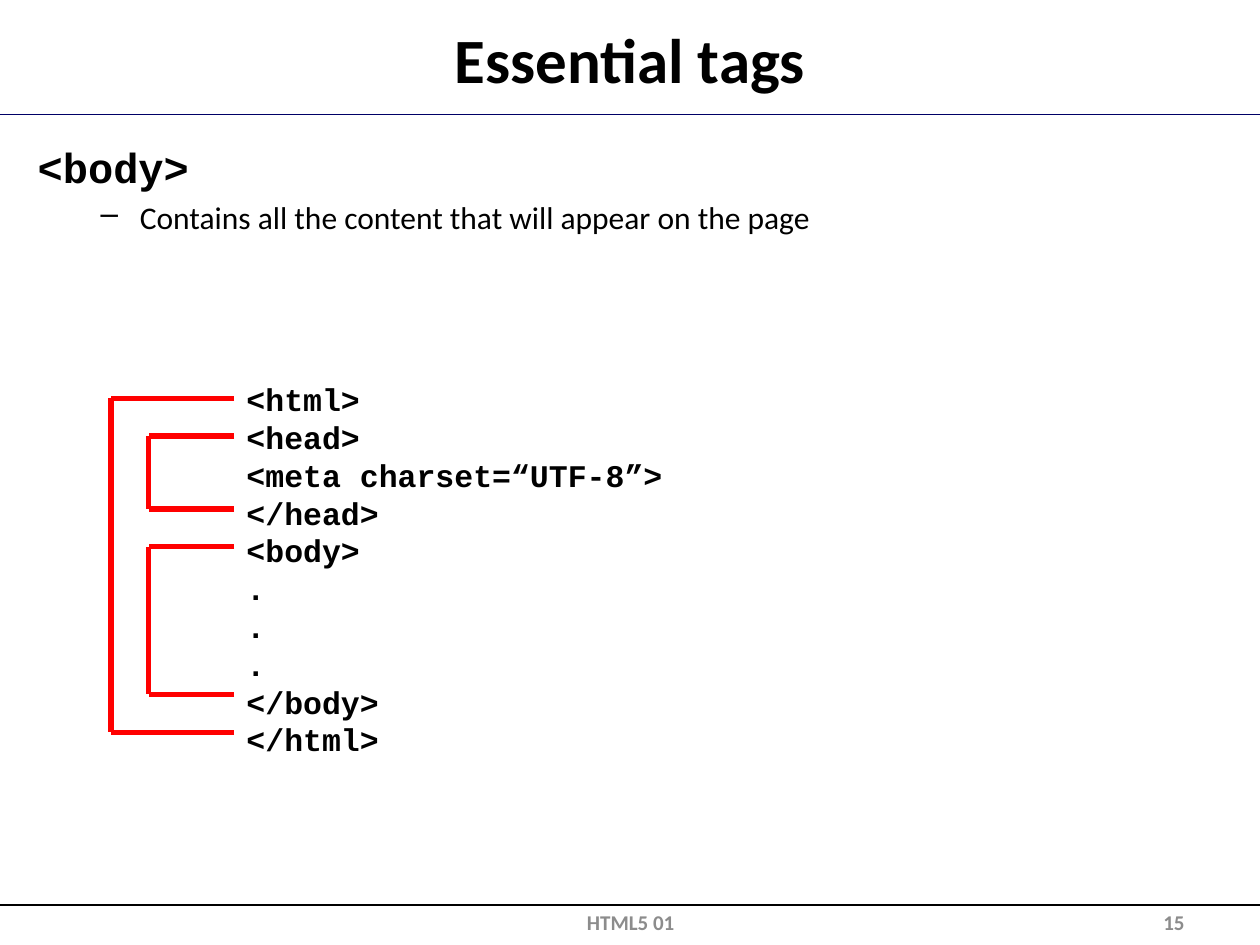
import lxml.etree
import pptx
import pptx.dml.color
import pptx.enum.shapes
import pptx.enum.text
import pptx.oxml.ns
import pptx.util

Cm = pptx.util.Cm
Pt = pptx.util.Pt
RGBColor = pptx.dml.color.RGBColor
ALIGN = pptx.enum.text.PP_ALIGN
ANCHOR = pptx.enum.text.MSO_ANCHOR
qn = pptx.oxml.ns.qn

BLACK = RGBColor(0x00, 0x00, 0x00)
NAVY = RGBColor(0x00, 0x00, 0x66)
RED = RGBColor(0xFF, 0x00, 0x00)
GRAY = RGBColor(0x8C, 0x8C, 0x8C)

presentation = pptx.Presentation()
presentation.slide_width = Cm(25.4)
presentation.slide_height = Cm(19.05)
slide = presentation.slides.add_slide(presentation.slide_layouts[6])


def add_line(left, top, right, bottom, color, width):
    connector = slide.shapes.add_connector(
        pptx.enum.shapes.MSO_CONNECTOR.STRAIGHT,
        Cm(left), Cm(top), Cm(right), Cm(bottom))
    connector.line.color.rgb = color
    connector.line.width = Pt(width)
    lxml.etree.SubElement(connector._element.spPr, qn("a:effectLst"))


def add_text(left, top, width, height, lines, align=ALIGN.LEFT, anchor=ANCHOR.TOP):
    shape = slide.shapes.add_textbox(Cm(left), Cm(top), Cm(width), Cm(height))
    frame = shape.text_frame
    frame.word_wrap = True
    frame.vertical_anchor = anchor
    for index, (text, font, size, bold, color) in enumerate(lines):
        paragraph = frame.add_paragraph() if index else frame.paragraphs[0]
        paragraph.alignment = align
        run = paragraph.add_run()
        run.text = text
        run.font.name = font
        run.font.size = Pt(size)
        run.font.bold = bold
        run.font.color.rgb = color
    return frame


add_line(0, 2.31, 25.4, 2.31, NAVY, 1)
add_line(0, 18.24, 25.4, 18.24, BLACK, 1)

add_text(0.25, 0.3, 24.9, 1.75, [("Essential tags", "Calibri", 36, True, BLACK)],
         ALIGN.CENTER, ANCHOR.MIDDLE)

body = add_text(0.51, 2.73, 24.38, 15.02, [
    ("<body>", "Courier New", 24, True, BLACK),
    ("Contains all the content that will appear on the page", "Calibri", 18, False, BLACK),
])
detail = body.paragraphs[1]
properties = detail._p.get_or_add_pPr()
properties.set("marL", str(Cm(2.06)))
properties.set("indent", str(-Cm(0.79)))
lxml.etree.SubElement(properties, qn("a:buChar")).set("char", "–")
detail.space_before = Pt(3.6)

code = ["<html>", "<head>", "<meta charset=“UTF-8”>", "</head>", "<body>",
        ".", ".", ".", "</body>", "</html>"]
add_text(4.72, 7.54, 14.94, 7.95,
         [(line, "Courier New", 18, True, BLACK) for line in code])

bracket_right = 4.72
for left, top, bottom in [(2.24, 8.03, 14.76), (3, 8.79, 10.26), (3, 11.02, 14)]:
    add_line(left, top, left, bottom, RED, 3)
    for level in (top, bottom):
        add_line(bracket_right, level, left, level, RED, 3)

for left, width, text, align in [(18.21, 5.92, "15", ALIGN.RIGHT),
                                 (8.69, 8.05, "HTML5 01", ALIGN.CENTER)]:
    add_text(left, 18.24, width, 0.69, [(text, "Calibri", 12, True, GRAY)],
             align, ANCHOR.MIDDLE)

presentation.save("out.pptx")
